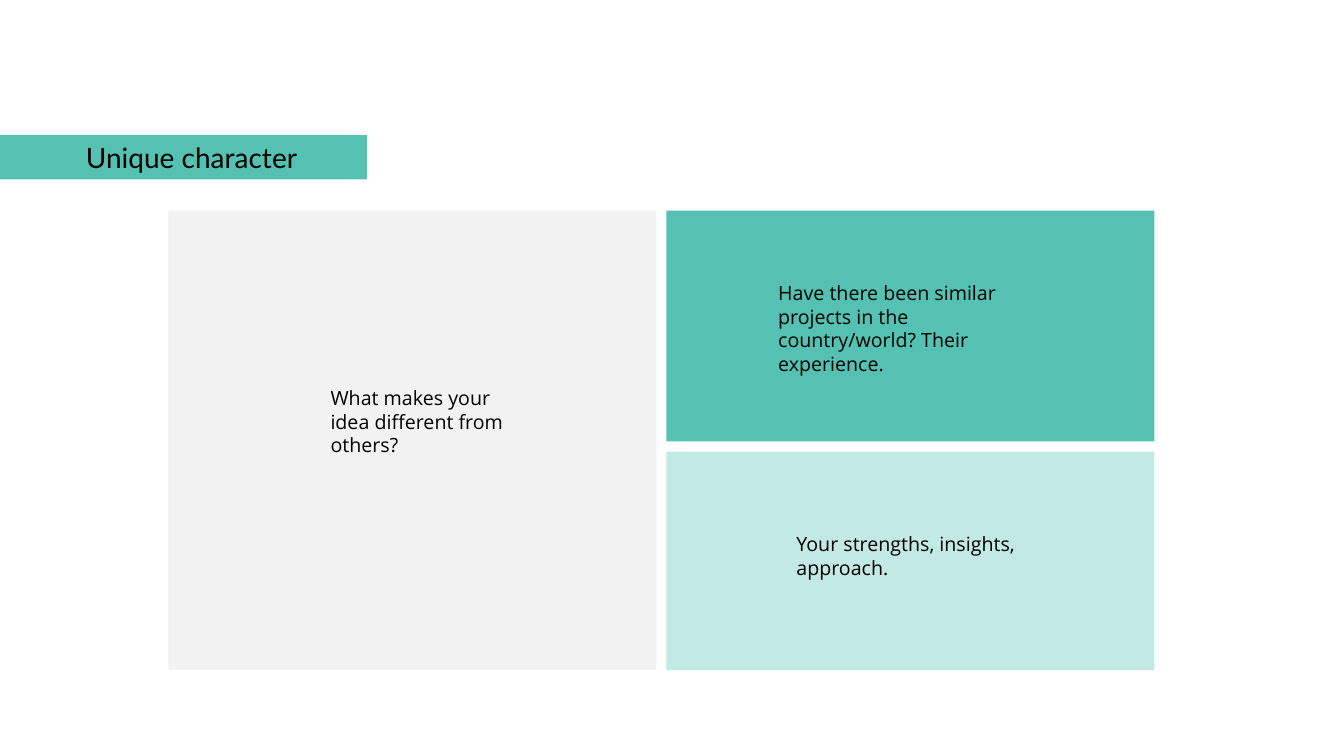
from lxml import etree
from pptx import Presentation
from pptx.dml.color import RGBColor
from pptx.enum.shapes import MSO_SHAPE
from pptx.enum.text import MSO_ANCHOR, MSO_AUTO_SIZE, PP_ALIGN
from pptx.oxml.ns import qn
from pptx.util import Pt

RECTANGLE = MSO_SHAPE.RECTANGLE
TOP = MSO_ANCHOR.TOP
FIT = MSO_AUTO_SIZE.SHAPE_TO_FIT_TEXT
LEFT, CENTER = PP_ALIGN.LEFT, PP_ALIGN.CENTER
PX = 9144
TITLE_ONLY = 5

COLORS = {"teal": "54C1B2", "grey": "F2F2F2", "ink": "000000"}
HEADING = "Unique character"
HEADING_BAR = (0, 134, 364, 44)
HEADING_AREA = (16, 134, 348, 44)

PANEL_WIDTH, GAP = 484, 10
GRID_LEFT, GRID_TOP, GRID_HEIGHT = 167, 209, 456
EXPERIENCE_HEIGHT, STRENGTHS_HEIGHT = 229, 217
right_column = GRID_LEFT + PANEL_WIDTH + GAP
strengths_top = GRID_TOP + GRID_HEIGHT - STRENGTHS_HEIGHT

QUESTIONS = [
    ("Have there been similar projects in the country/world? Their experience.",
     (right_column, GRID_TOP, PANEL_WIDTH, EXPERIENCE_HEIGHT), "teal", 100,
     (762, 274, 267, 104)),
    ("Your strengths, insights, approach.",
     (right_column, strengths_top, PANEL_WIDTH, STRENGTHS_HEIGHT), "teal", 35,
     (780, 523, 249, 57)),
    ("What makes your idea different from others?",
     (GRID_LEFT, GRID_TOP, PANEL_WIDTH, GRID_HEIGHT), "grey", 100,
     (318, 378, 195, 81)),
]


def emu(box):
    return [length * PX for length in box]


def add_panel(slide, box, color, opacity=100):
    panel = slide.shapes.add_shape(RECTANGLE, *emu(box))
    panel.shadow.inherit = False
    panel.line.fill.background()
    panel.fill.solid()
    panel.fill.fore_color.rgb = RGBColor.from_string(COLORS[color])
    if opacity < 100:
        tint = panel.element.spPr.find(qn("a:solidFill")).find(qn("a:srgbClr"))
        etree.SubElement(tint, qn("a:alpha"), val=str(opacity * 1000))


def write(holder, text, box, font="Open Sans", size=14, align=LEFT, wrap=True):
    holder.left, holder.top, holder.width, holder.height = emu(box)
    frame = holder.text_frame
    frame.text = text
    frame.word_wrap = wrap
    frame.auto_size = FIT
    frame.vertical_anchor = TOP
    paragraph = frame.paragraphs[0]
    paragraph.alignment = align
    style = paragraph.runs[0].font
    style.name = font
    style.size = Pt(size)
    style.color.rgb = RGBColor.from_string(COLORS["ink"])


def main():
    deck = Presentation()
    deck.slide_width, deck.slide_height = emu((1333, 750))
    slide = deck.slides.add_slide(deck.slide_layouts[TITLE_ONLY])

    for question, panel_box, color, opacity, text_box in QUESTIONS:
        add_panel(slide, panel_box, color, opacity)
        write(slide.shapes.add_textbox(*emu(text_box)), question, text_box)

    add_panel(slide, HEADING_BAR, "teal")
    heading = slide.shapes.title
    heading.element.getparent().append(heading.element)
    write(heading, HEADING, HEADING_AREA, font="Lato", size=20,
          align=CENTER, wrap=False)

    deck.save("out.pptx")


if __name__ == "__main__":
    main()
